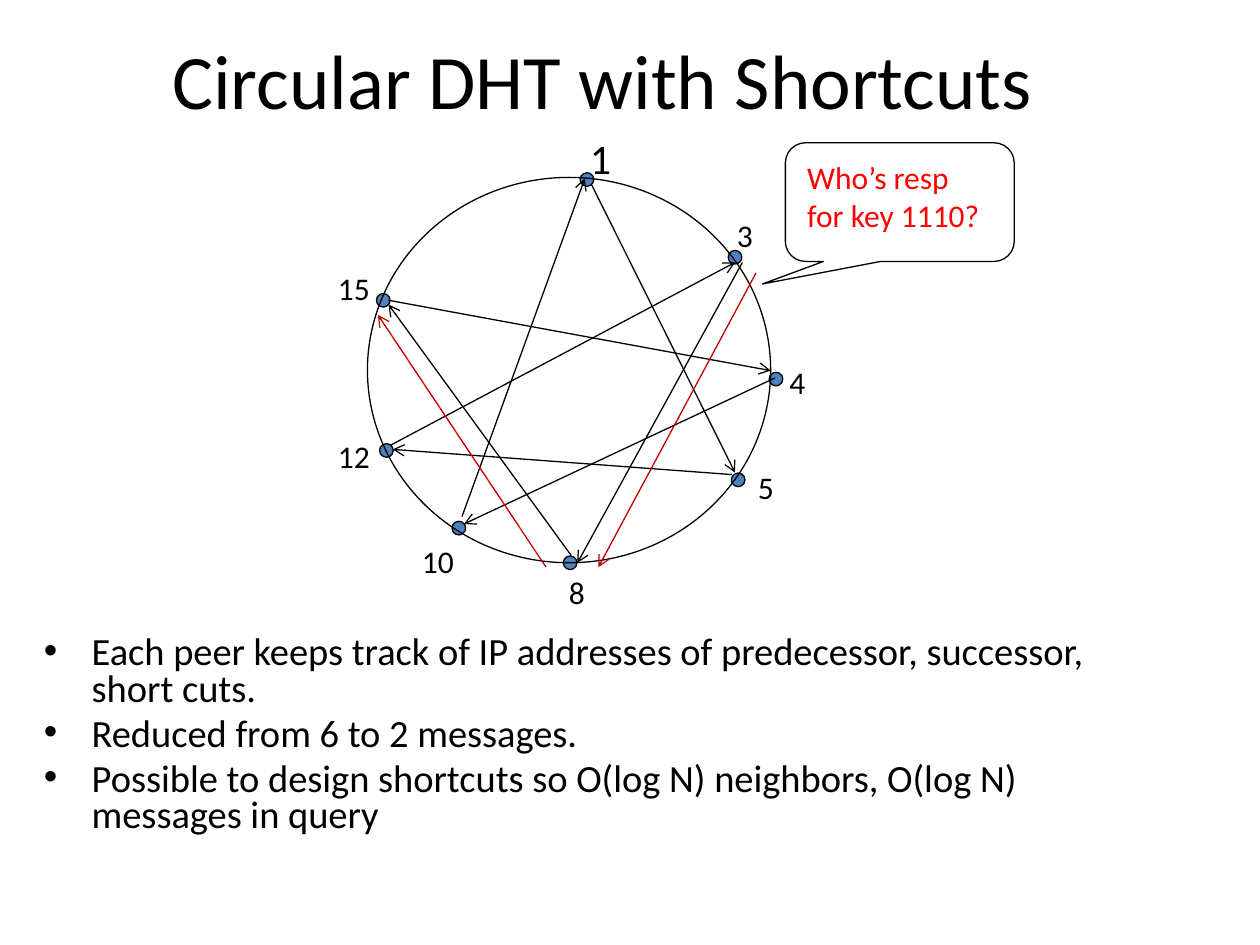
from lxml.etree import SubElement
from pptx import Presentation
from pptx.dml.color import RGBColor
from pptx.enum.shapes import MSO_CONNECTOR as CONN, MSO_SHAPE as SHAPE
from pptx.enum.text import MSO_ANCHOR as ANCHOR, MSO_AUTO_SIZE as AUTO, PP_ALIGN as ALIGN
from pptx.oxml.ns import qn
from pptx.util import Inches, Pt

BLACK = RGBColor(0x00, 0x00, 0x00)
BLUE = RGBColor(0x4F, 0x81, 0xBD)
RED = RGBColor(0xFF, 0x00, 0x00)
DARK_RED = RGBColor(0xC0, 0x00, 0x00)
FONT = "Calibri"

# Grid of 120 columns by 90 rows; every cell is 1/12 inch
COLS, ROWS = 120, 90
DOT = 1.3

# Peer: dot centre, label corner, label width, label size
PEERS = {
    "1": ((55.9, 17.1), (55, 12), 4.4, 24),
    "3": ((70, 24.5), (69, 20), 4.4, 18),
    "4": ((73.9, 36.1), (74, 34), 4.4, 18),
    "5": ((70.3, 45.7), (71, 44), 4.4, 18),
    "8": ((54.3, 53.6), (53, 54), 4.4, 18),
    "10": ((43.7, 50.3), (39, 51), 6.5, 18),
    "12": ((36.8, 42.9), (31, 41), 6.5, 18),
    "15": ((36.5, 28.6), (31, 25), 6.5, 18),
}
SHORTCUTS = [
    ((73.8, 36), (44.2, 49.9)),    # 4 to 10
    ((69.7, 45.2), (37.4, 42.8)),  # 5 to 12
    ((54.4, 52.9), (37, 29)),      # 8 to 15
    ((44, 49.2), (55.7, 17)),      # 10 to 1
    ((37.2, 42.4), (70, 25)),      # 12 to 3
    ((37, 28.6), (73.4, 35.3)),    # 15 to 4
    ((56.3, 17.5), (70, 45)),      # 1 to 5
    ((70.7, 25), (55, 53.6)),      # 3 to 8
]
QUERY_HOPS = [((72, 26), (57, 54)), ((52, 54), (36, 30))]
BULLETS = [
    "Each peer keeps track of IP addresses of predecessor, successor, short cuts.",
    "Reduced from 6 to 2 messages.",
    "Possible to design shortcuts so O(log N) neighbors, O(log N) messages in query",
]


def cells(*values):
    return [Inches(v / 12) for v in values]


def add_run(p, text, size, color=BLACK):
    r = p.add_run()
    r.text = text
    r.font.name, r.font.size = FONT, Pt(size)
    r.font.color.rgb = color


def add_text(s, box, lines, size, color=BLACK, wrap=True, auto=AUTO.SHAPE_TO_FIT_TEXT):
    tf = s.shapes.add_textbox(*cells(*box)).text_frame
    tf.word_wrap, tf.auto_size = wrap, auto
    for i, line in enumerate(lines):
        p = tf.add_paragraph() if i else tf.paragraphs[0]
        add_run(p, line, size, color)
    return tf


def add_outline(s, kind, box, fill=None):
    sp = s.shapes.add_shape(kind, *cells(*box))
    sp.shadow.inherit = False
    if fill is None:
        sp.fill.background()
    else:
        sp.fill.solid()
        sp.fill.fore_color.rgb = fill
    sp.line.color.rgb, sp.line.width = BLACK, Pt(0.75)
    return sp


def add_arrow(s, start, end, color=BLACK):
    line = s.shapes.add_connector(CONN.STRAIGHT, *cells(*start, *end))
    line.line.color.rgb, line.line.width = color, Pt(0.75)
    SubElement(line.line._get_or_add_ln(), qn("a:tailEnd"), type="arrow")
    SubElement(line._element.spPr, qn("a:effectLst"))


def add_title(s, text):
    title = s.shapes.title
    title.left, title.top, title.width, title.height = cells(3.4, 0, 108, 15)
    tf = title.text_frame
    tf.vertical_anchor = ANCHOR.MIDDLE
    p = tf.paragraphs[0]
    p.alignment = ALIGN.CENTER
    add_run(p, text, 44)


def add_bullets(s, box, lines, size):
    tf = add_text(s, box, lines, size, auto=AUTO.NONE)
    indent = Inches(0.38)
    for p in tf.paragraphs:
        p.line_spacing = 0.8
        p.space_before = Pt(size * 0.2)
        pPr = p._p.get_or_add_pPr()
        pPr.set("marL", str(indent))
        pPr.set("indent", str(-indent))
        SubElement(pPr, qn("a:buFont"), typeface="Arial")
        SubElement(pPr, qn("a:buChar"), char="•")


def add_ring(s):
    for (x, y), corner, width, size in PEERS.values():
        add_outline(s, SHAPE.OVAL, (x - DOT / 2, y - DOT / 2, DOT, DOT), BLUE)
    add_outline(s, SHAPE.OVAL, (35, 16.9, 38.4, 36.7))
    for name, (centre, corner, width, size) in PEERS.items():
        add_text(s, (*corner, width, 6), [name], size, wrap=False)


def add_question(s):
    callout = add_outline(s, SHAPE.ROUNDED_RECTANGULAR_CALLOUT, (74.8, 13.6, 21.8, 11.3))
    for i, value in enumerate((-0.6, 0.69, 0.17)):
        callout.adjustments[i] = value
    add_text(s, (75.7, 14.5, 21.6, 9.2), ["Who’s resp", "for key 1110?"], 18, RED)


def main():
    prs = Presentation()
    prs.slide_width, prs.slide_height = cells(COLS, ROWS)
    s = prs.slides.add_slide(prs.slide_layouts[5])

    # Title and bullets
    add_title(s, "Circular DHT with Shortcuts")
    add_bullets(s, (3, 60, 108, 22), BULLETS, 22)

    # Ring of peers with shortcuts, then the path of the query
    add_ring(s)
    for start, end in SHORTCUTS:
        add_arrow(s, start, end)
    for start, end in QUERY_HOPS:
        add_arrow(s, start, end, DARK_RED)

    # Question asked at peer 3
    add_question(s)
    prs.save("out.pptx")


if __name__ == "__main__":
    main()
